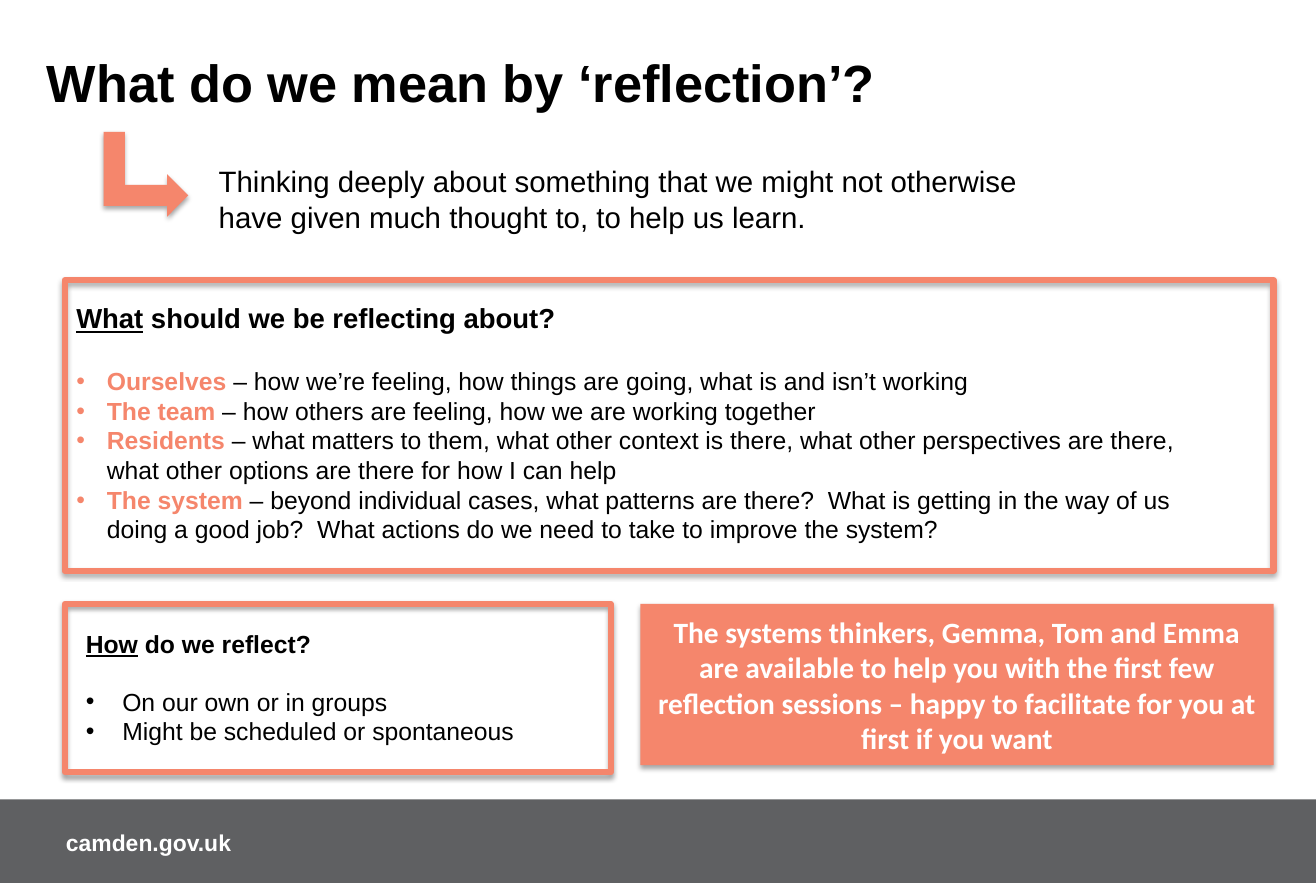
"""Build the slide that explains what reflection means and how to do it."""
from lxml import etree
from pptx import Presentation
from pptx import util as u
from pptx.dml.color import RGBColor
from pptx.enum import shapes, text
from pptx.oxml import parse_xml
from pptx.oxml.ns import qn

CORAL, BLACK, WHITE, GREY = "F5866C", "000000", "FFFFFF", "5F6062"
LEFT, LOWER_ROW = 4.92, 68.4
SHADOW = (
    '<a:effectLst xmlns:a="http://schemas.openxmlformats.org/drawingml/2006/main">'
    '<a:outerShdw blurRad="39370" dist="22860" dir="5400000" rotWithShape="0">'
    '<a:srgbClr val="000000"><a:alpha val="35000"/></a:srgbClr>'
    '</a:outerShdw></a:effectLst>'
)

deck = Presentation()
deck.slide_width, deck.slide_height = u.Inches(11.18), u.Inches(7.5)
slide = deck.slides.add_slide(deck.slide_layouts[6])


def color(value):
    return RGBColor.from_string(value)


def area(left, top, width, height):
    across, down = deck.slide_width / 100, deck.slide_height / 100
    return [int(left * across), int(top * down), int(width * across), int(height * down)]


RECT, ARROW = shapes.MSO_SHAPE.RECTANGLE, shapes.MSO_SHAPE.BENT_UP_ARROW
panels = {}
for part, preset, place, fill, line, turn in [
    ("footer", RECT, (0, 90.53, 100, 9.47), GREY, None, 0),
    ("arrow", ARROW, (7.87, 14.93, 6.44, 9.6), CORAL, None, 90),
    ("what", RECT, (LEFT, 31.73, 91.86, 32.93), None, CORAL, 0),
    ("how", RECT, (LEFT, LOWER_ROW, 41.5, 19.07), None, CORAL, 0),
    ("offer", RECT, (48.66, LOWER_ROW, 48.12, 18.27), CORAL, None, 0),
]:
    panel = slide.shapes.add_shape(preset, *area(*place))
    panel.rotation = turn
    if fill:
        panel.fill.solid()
        panel.fill.fore_color.rgb = color(fill)
    else:
        panel.fill.background()
    if line:
        panel.line.color.rgb = color(line)
        panel.line.width = u.Pt(3.75)
    else:
        panel.line.fill.background()
    panel.shadow.inherit = False
    if part != "footer":
        properties = panel._element.spPr
        properties.replace(properties.find(qn("a:effectLst")), parse_xml(SHADOW))
    panels[part] = panel

topics = [
    ("Ourselves", " – how we’re feeling, how things are going, what is and isn’t working"),
    ("The team", " – how others are feeling, how we are working together"),
    ("Residents", " – what matters to them, what other context is there, what other "
                  "perspectives are there, what other options are there for how I can help"),
    ("The system", " – beyond individual cases, what patterns are there?  What is getting in "
                   "the way of us doing a good job?  What actions do we need to take to "
                   "improve the system?"),
]
ways = ["On our own or in groups", "Might be scheduled or spontaneous"]

blocks = [
    ((2.68, 5.07, 89.36, 13.87), 32, BLACK, [("What do we mean by ‘reflection’?", "b")], 0, []),
    ((15.74, 17.87, 63.24, 9.47), 18, BLACK,
     [("Thinking deeply about something that we might not otherwise "
       "have given much thought to, to help us learn.", "")], 0, []),
    ((LEFT, 33.47, 89.36, 29.2), 16.8, BLACK,
     [("What", "bu"), (" should we be reflecting about?", "b")], 0.26,
     [[(topic, "bc"), (detail, "")] for topic, detail in topics]),
    ((5.64, 70.53, 35.15, 14.93), 15.1, BLACK,
     [("How", "bu"), (" do we reflect?", "b")], 0.31, [[(way, "")] for way in ways]),
    ((5.01, 93.87, 41.23, 3.2), 14, WHITE, [("camden.gov.uk", "b")], 0, []),
    (None, 18, WHITE,
     [("The systems thinkers, Gemma, Tom and Emma are available to help you with the first few "
       "reflection sessions – happy to facilitate for you at first if you want", "b")], 0, []),
]
for place, size, ink, heading, indent, bullets in blocks:
    holder = slide.shapes.add_textbox(*area(*place)) if place else panels["offer"]
    frame = holder.text_frame
    frame.word_wrap = True
    frame.vertical_anchor = text.MSO_ANCHOR.TOP if place else text.MSO_ANCHOR.MIDDLE
    if ink == WHITE and place:
        frame.margin_left = frame.margin_top = frame.margin_bottom = 0
    for row, runs in enumerate([heading] + bullets):
        paragraph = frame.add_paragraph() if row else frame.paragraphs[0]
        paragraph.alignment = text.PP_ALIGN.LEFT if place else text.PP_ALIGN.CENTER
        if row:
            layout = paragraph._p.get_or_add_pPr()
            layout.set("marL", str(u.Inches(indent)))
            layout.set("indent", str(-u.Inches(indent)))
            tint = etree.SubElement(layout, qn("a:buClr"))
            etree.SubElement(tint, qn("a:srgbClr"), val=CORAL if len(runs) > 1 else BLACK)
            etree.SubElement(layout, qn("a:buFont"), typeface="Arial")
            etree.SubElement(layout, qn("a:buChar"), char="•")
        elif bullets:
            paragraph.space_after = u.Pt(size * 1.15)
        for words, style in runs:
            run = paragraph.add_run()
            run.text = words
            run.font.name = "Arial" if place else "Calibri"
            run.font.size = u.Pt(15.1 if row else size)
            run.font.bold = "b" in style
            run.font.underline = "u" in style
            run.font.color.rgb = color(CORAL if "c" in style else ink)

deck.save("out.pptx")
